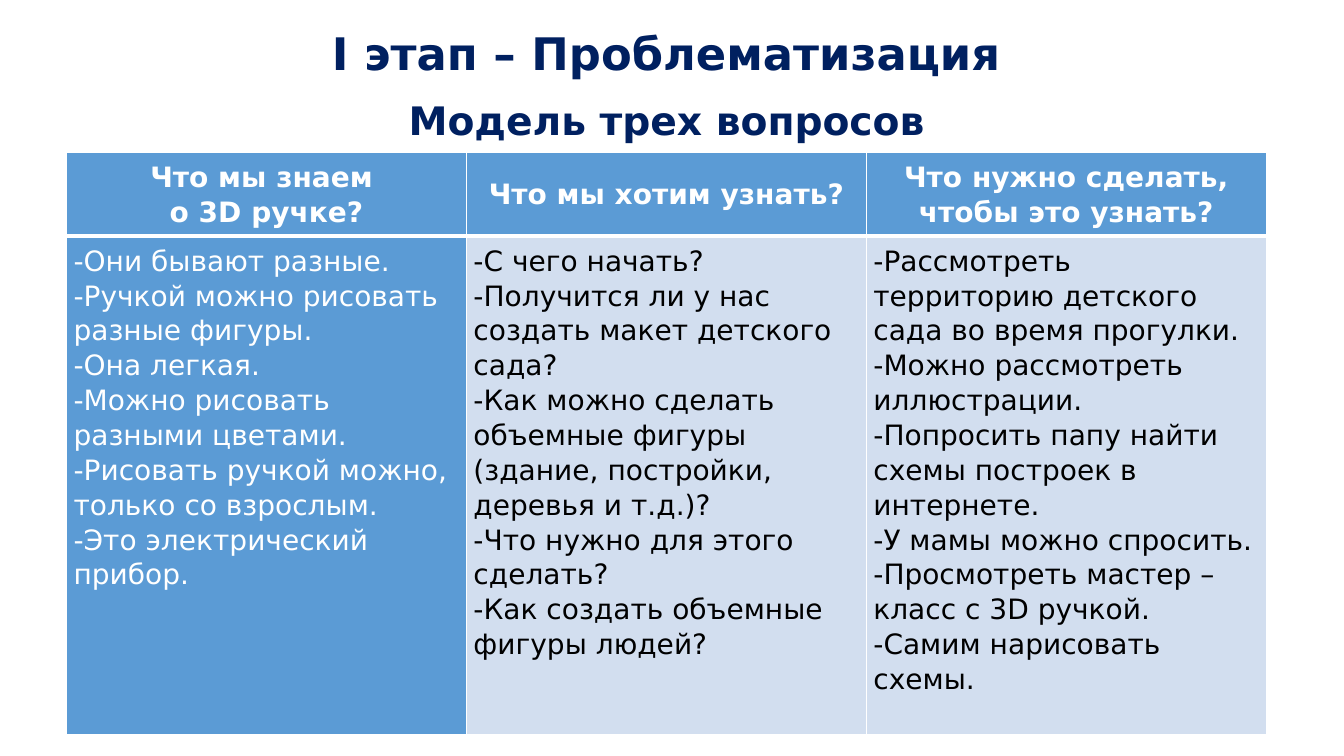
from lxml import etree
from pptx import Presentation
from pptx.dml.color import RGBColor
from pptx.enum.text import MSO_ANCHOR as Anchor, MSO_AUTO_SIZE as AutoSize, PP_ALIGN as Align
from pptx.oxml.ns import qn
from pptx.util import Inches, Pt

WIDTH, HEIGHT = 13.33, 7.5
TITLE_ONLY = 5
NAVY, BLUE, PALE, WHITE, BLACK = "002060", "5B9BD5", "D2DEEF", "FFFFFF", "000000"

TITLES = [("I этап – Проблематизация", 32), ("Модель трех вопросов", 28)]
HEADERS = [
    ["Что мы знаем ", "о 3D ручке?"],
    ["Что мы хотим узнать?"],
    ["Что нужно сделать, чтобы это узнать?"],
]
ANSWERS = [
    [
        "-Они бывают разные.",
        "-Ручкой можно рисовать разные фигуры.",
        "-Она легкая.",
        "-Можно рисовать разными цветами.",
        "-Рисовать ручкой можно, только со взрослым.",
        "-Это электрический прибор.",
    ],
    [
        "-С чего начать?",
        "-Получится ли у нас создать макет детского сада?",
        "-Как можно сделать объемные фигуры (здание, постройки, деревья и т.д.)?",
        "-Что нужно для этого сделать?",
        "-Как создать объемные фигуры людей?",
    ],
    [
        "-Рассмотреть территорию детского сада во время прогулки.",
        "-Можно рассмотреть иллюстрации.",
        "-Попросить папу найти схемы построек в интернете.",
        "-У мамы можно спросить.",
        "-Просмотреть мастер – класс с 3D ручкой.",
        "-Самим нарисовать схемы.",
    ],
]


def color(code):
    return RGBColor.from_string(code)


class SlideBuilder:
    """Holds the text style and the current slide."""

    font_name = "DejaVu Sans"
    cell_size = 20
    line_spacing = 1.07
    cell_inset = Inches(0.07)

    def __init__(self, deck):
        self.deck = deck
        self.slide = deck.slides.add_slide(deck.slide_layouts[TITLE_ONLY])

    def area(self, left, top, width, height):
        """Turn shares of the slide into lengths."""
        across, down = self.deck.slide_width, self.deck.slide_height
        return int(left * across), int(top * down), int(width * across), int(height * down)

    def style(self, para, size, code, bold, align, spacing):
        para.alignment = align
        para.line_spacing = spacing
        font = para.font
        font.name, font.size, font.bold = self.font_name, Pt(size), bold
        font.color.rgb = color(code)

    def title(self, lines, area, gap):
        box = self.slide.shapes.title
        box.left, box.top, box.width, box.height = self.area(*area)
        frame = box.text_frame
        frame.auto_size = AutoSize.NONE
        frame.vertical_anchor = Anchor.TOP
        frame.text = "\n".join(text for text, _ in lines)
        for para, (_, size) in zip(frame.paragraphs, lines):
            self.style(para, size, NAVY, True, Align.CENTER, 1.0)
            para.space_before = Pt(0)
        frame.paragraphs[-1].space_before = Pt(gap)

    def table(self, headers, answers, area, header_share):
        left, top, width, height = self.area(*area)
        frame = self.slide.shapes.add_table(2, len(headers), left, top, width, height)
        table = frame.table
        table.horz_banding = False
        table.rows[0].height = int(height * header_share)
        table.rows[1].height = height - table.rows[0].height
        for column, (header, answer) in enumerate(zip(headers, answers)):
            first = column == 0
            self.cell(table.cell(0, column), header, BLUE, WHITE, is_header=True)
            self.cell(table.cell(1, column), answer, BLUE if first else PALE,
                      WHITE if first else BLACK)

    def cell(self, cell, lines, fill, ink, is_header=False):
        # The thick rule runs between the header and the answers
        thick_side = "B" if is_header else "T"
        for side in "LRTB":
            self.border(cell, side, 3 if side == thick_side else 1)
        cell.fill.solid()
        cell.fill.fore_color.rgb = color(fill)
        cell.margin_left = cell.margin_right = self.cell_inset
        cell.margin_top = cell.margin_bottom = self.cell_inset
        cell.vertical_anchor = Anchor.MIDDLE if is_header else Anchor.TOP
        cell.text_frame.text = "\n".join(lines)
        align = Align.CENTER if is_header else Align.LEFT
        for para in cell.text_frame.paragraphs:
            self.style(para, self.cell_size, ink, is_header, align, self.line_spacing)

    def border(self, cell, side, points):
        properties = cell._tc.get_or_add_tcPr()
        line = etree.SubElement(properties, qn(f"a:ln{side}"), w=str(Pt(points)))
        solid = etree.SubElement(line, qn("a:solidFill"))
        etree.SubElement(solid, qn("a:srgbClr"), val=WHITE)


def main():
    deck = Presentation()
    deck.slide_width, deck.slide_height = Inches(WIDTH), Inches(HEIGHT)
    page = SlideBuilder(deck)

    # Heading and subheading
    page.title(TITLES, (0.49 / WIDTH, 0.21 / HEIGHT, 12.24 / WIDTH, 7.1 / HEIGHT), gap=12)

    # Three questions with their answers
    page.table(HEADERS, ANSWERS, (0.66 / WIDTH, 1.51 / HEIGHT, 11.9 / WIDTH, 5.77 / HEIGHT),
               header_share=0.82 / 5.77)

    deck.save("out.pptx")


if __name__ == "__main__":
    main()
